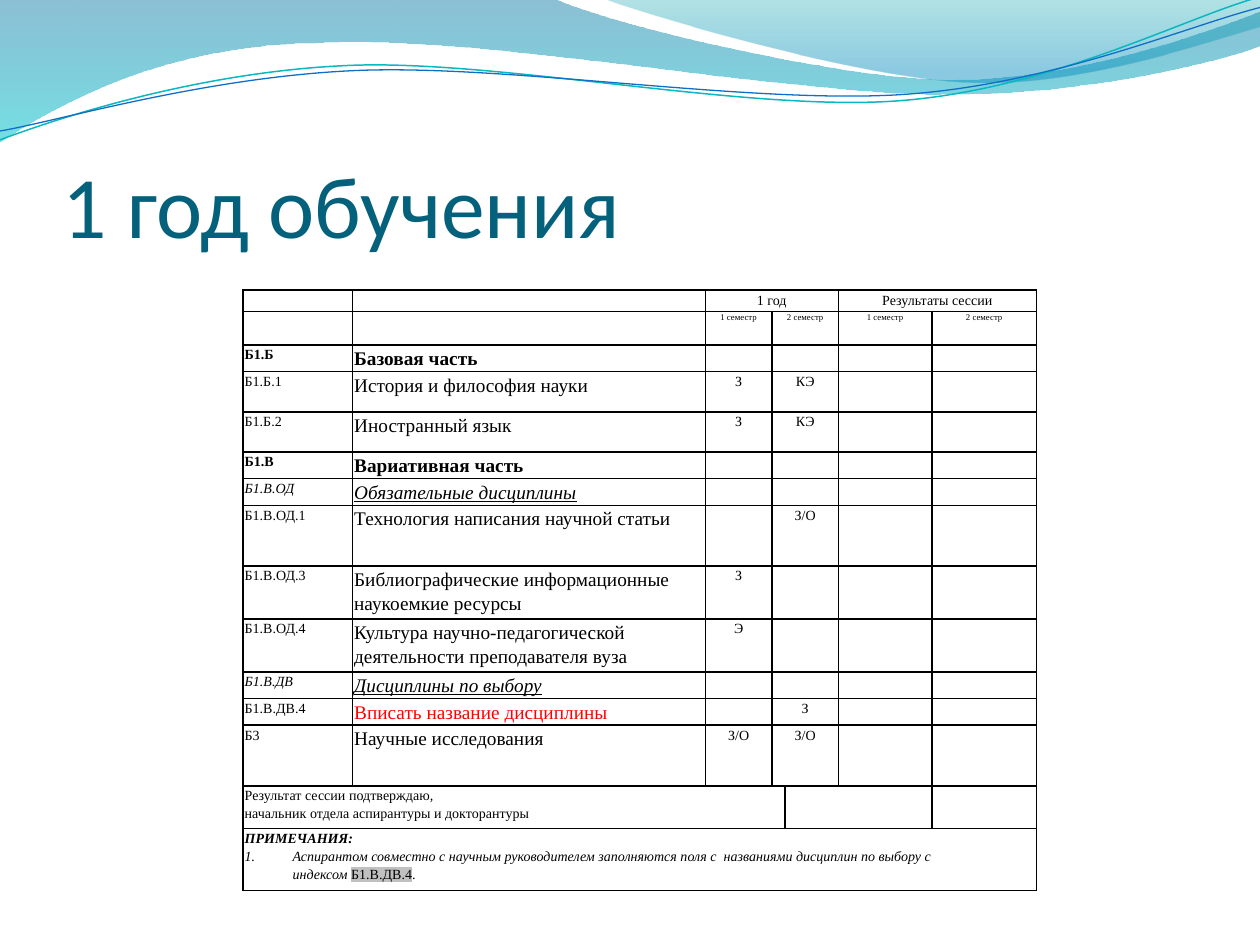
import dataclasses
import math
import typing

import lxml.etree
import pptx
import pptx.dml.color
import pptx.enum.text
import pptx.oxml.ns
import pptx.util

Pt = pptx.util.Pt
qn = pptx.oxml.ns.qn
ALIGN = pptx.enum.text.PP_ALIGN
SERIF = "Times New Roman"
BODY = {"name": SERIF, "size": Pt(8), "bold": False, "italic": False, "underline": False}
COLUMNS = (62.6, 201.6, 38.2, 7.4, 30.5, 53.5, 59.8)
SHORT, MEDIUM, TALL, DOUBLE = 14, 23, 34.6, 28


@dataclasses.dataclass
class Wave:
    start: tuple[float, float]
    segments: list[tuple[float, ...]]
    closed: bool = True
    stops: tuple = ()
    line: str = ""
    width: float = 0
    center: tuple[float, float] = (0, 0)
    rotation: float = 0


@dataclasses.dataclass
class Text:
    text: str
    size: float = 8
    color: str = "000000"
    highlight: str = ""
    style: dict = dataclasses.field(default_factory=dict)


@dataclasses.dataclass
class Course:
    code: str
    name: str
    height: float
    marks: tuple[str, str] = ("", "")
    code_style: dict = dataclasses.field(default_factory=dict)
    name_style: dict = dataclasses.field(default_factory=dict)
    color: str = "000000"


BOLD = {"bold": True}
ITALIC = {"italic": True}
UNDERLINED = {"italic": True, "underline": True}
WAVES = [
    Wave((0, -0.7), [(316.8, -0.7), (342.7, 12.2, 478.1, 45.4, 545.8, 45.4),
                     (614.2, 45.4, 689.8, 18.7, 720, 6.5), (720.7, 25.9),
                     (707.8, 31.7, 626.4, 54.7, 537.1, 54),
                     (447.8, 54, 275, 20.2, 185, 24.5),
                     (92.9, 25.2, 33.1, 59.8, -0.7, 81.4)],
         stops=((0, "0074A1", 45), (1, "00C6CF", 55))),
    Wave((344.9, -0.7), [(366.5, 7.9, 491, 44.6, 553.7, 46.8),
                         (616.3, 49.7, 691.9, 23, 720, 15.1), (720, 0)],
         stops=((0, "00A1A9", 30), (0.8, "008BBF", 45))),
    Wave((0, 79.9), [(34.6, 67, 113.8, 41, 199.4, 37.4),
                     (284.4, 33.8, 427, 64.1, 513.4, 57.6),
                     (599.8, 51.1, 675.4, 10.8, 718.6, -1.4)],
         closed=False, line="0AB8BF", width=0.85, center=(359.3, 41.4), rotation=-2.7),
    Wave((0, 74.9), [(33.8, 69.1, 118.1, 43.9, 203.8, 40.3),
                     (290.2, 36.7, 429.8, 59.8, 516.2, 54),
                     (601.9, 48.2, 677.5, 15.1, 720, 4.3)],
         closed=False, line="0F6FC6", width=0.75, center=(359.6, 42.5), rotation=-2.7),
]
COURSES = [
    Course("Б1.Б", "Базовая часть", SHORT, code_style=BOLD, name_style=BOLD),
    Course("Б1.Б.1", "История и философия науки", MEDIUM, ("З", "КЭ")),
    Course("Б1.Б.2", "Иностранный язык", MEDIUM, ("З", "КЭ")),
    Course("Б1.В", "Вариативная часть", SHORT, code_style=BOLD, name_style=BOLD),
    Course("Б1.В.ОД", "Обязательные дисциплины", SHORT, code_style=ITALIC, name_style=UNDERLINED),
    Course("Б1.В.ОД.1", "Технология написания научной статьи", TALL, ("", "З/О")),
    Course("Б1.В.ОД.3", "Библиографические информационные наукоемкие ресурсы", DOUBLE, ("З", "")),
    Course("Б1.В.ОД.4", "Культура научно-педагогической деятельности преподавателя вуза",
           DOUBLE, ("Э", "")),
    Course("Б1.В.ДВ", "Дисциплины по выбору", SHORT, code_style=ITALIC, name_style=UNDERLINED),
    Course("Б1.В.ДВ.4", "Вписать название дисциплины", SHORT, ("", "З"), color="FF0000"),
    Course("Б3", "Научные исследования", TALL, ("З/О", "З/О")),
]


def rgb(value: str) -> pptx.dml.color.RGBColor:
    return pptx.dml.color.RGBColor.from_string(value)


def apply(target: typing.Any, values: dict) -> None:
    for name, value in values.items():
        setattr(target, name, value)


def wave_points(wave: Wave) -> list[tuple[int, int]]:
    points = [wave.start]
    for segment in wave.segments:
        points += zip(segment[::2], segment[1::2])
    angle = math.radians(-wave.rotation)
    cos, sin = math.cos(angle), math.sin(angle)
    cx, cy = wave.center
    return [(Pt(cx + (x - cx) * cos - (y - cy) * sin), Pt(cy + (x - cx) * sin + (y - cy) * cos))
            for x, y in points]


def bend_segments(shape: typing.Any, wave: Wave) -> None:
    lines = iter(list(shape._element.iter(qn("a:lnTo"))))
    for segment in wave.segments:
        group = [next(lines) for _ in segment[::2]]
        if len(group) == 3:
            curve = lxml.etree.Element(qn("a:cubicBezTo"))
            group[0].addprevious(curve)
            for line in group:
                curve.append(line[0])
                line.getparent().remove(line)


def draw_wave(slide: typing.Any, wave: Wave) -> None:
    first, *rest = wave_points(wave)
    builder = slide.shapes.build_freeform(*first)
    builder.add_line_segments(rest, close=wave.closed)
    shape = builder.convert_to_shape()
    bend_segments(shape, wave)
    shape.shadow.inherit = False
    shape.rotation = wave.rotation
    if wave.line:
        shape.fill.background()
        shape.line.color.rgb = rgb(wave.line)
        shape.line.width = Pt(wave.width)
        return
    shape.line.fill.background()
    shape.fill.gradient()
    shape.fill.gradient_angle = 270
    elements = shape._element.iter(qn("a:gs"))
    for stop, element, values in zip(shape.fill.gradient_stops, elements, wave.stops):
        stop.position, color, opacity = values
        stop.color.rgb = rgb(color)
        lxml.etree.SubElement(element[0], qn("a:alpha"), val=str(opacity * 1000))


def add_text(paragraph: typing.Any, text: Text) -> None:
    run = paragraph.add_run()
    run.text = text.text
    apply(run.font, BODY | {"size": Pt(text.size)} | text.style)
    run.font.color.rgb = rgb(text.color)
    if text.highlight:
        highlight = lxml.etree.Element(qn("a:highlight"))
        lxml.etree.SubElement(highlight, qn("a:srgbClr"), val=text.highlight)
        run.font._element.find(qn("a:solidFill")).addnext(highlight)


def write_cell(cell: typing.Any, *lines: list[Text], centered: bool = False) -> None:
    margin = Pt(4.3 if centered else 1)
    apply(cell, {"margin_left": margin, "margin_right": margin})
    for index, line in enumerate(lines):
        frame = cell.text_frame
        paragraph = frame.add_paragraph() if index else frame.paragraphs[0]
        apply(paragraph, {"line_spacing": 1.15,
                          "alignment": ALIGN.CENTER if centered else ALIGN.LEFT})
        for text in line:
            add_text(paragraph, text)


def format_cell(cell: typing.Any) -> None:
    apply(cell, {"margin_top": 0, "margin_bottom": 0})
    properties = cell._tc.get_or_add_tcPr()
    for side in ("a:lnL", "a:lnR", "a:lnT", "a:lnB"):
        line = lxml.etree.SubElement(properties, qn(side), w=str(Pt(1)))
        fill = lxml.etree.SubElement(line, qn("a:solidFill"))
        lxml.etree.SubElement(fill, qn("a:srgbClr"), val="000000")
    cell.fill.background()
    if not cell.text_frame.text:
        lxml.etree.SubElement(cell.text_frame.paragraphs[0]._p, qn("a:endParaRPr"), sz="800")


def draw_table(slide: typing.Any) -> None:
    heights = [SHORT - 1.8, 19.2, *(course.height for course in COURSES), 24.5, 35.3]
    frame = slide.shapes.add_table(len(heights), len(COLUMNS), Pt(138.8), Pt(165.8),
                                   Pt(sum(COLUMNS)), Pt(sum(heights)))
    table = frame.table
    apply(table, {"first_row": False, "horz_banding": False})
    for column, width in zip(table.columns, COLUMNS):
        column.width = Pt(width)
    for row, height in zip(table.rows, heights):
        row.height = Pt(height)
    signature, notes = len(heights) - 2, len(heights) - 1
    spans = [(0, 2, 4), (0, 5, 6), (signature, 0, 3), (signature, 4, 5), (notes, 0, 6)]
    spans += [(row, 3, 4) for row in range(1, signature)]
    for row, first, last in spans:
        table.cell(row, first).merge(table.cell(row, last))

    for column, title in ((2, "1 год"), (5, "Результаты сессии")):
        write_cell(table.cell(0, column), [Text(title)], centered=True)
    for column, number in ((2, 1), (3, 2), (5, 1), (6, 2)):
        write_cell(table.cell(1, column), [Text(f"{number} семестр", 5)], centered=True)
    for row, course in enumerate(COURSES, 2):
        write_cell(table.cell(row, 0), [Text(course.code, style=course.code_style)])
        write_cell(table.cell(row, 1),
                   [Text(course.name, 11, course.color, style=course.name_style)])
        for column, mark in enumerate(course.marks, 2):
            if mark:
                write_cell(table.cell(row, column), [Text(mark)], centered=True)
    write_cell(table.cell(signature, 0), [Text("Результат сессии подтверждаю,")],
               [Text("начальник отдела аспирантуры и докторантуры")])
    note = ("Аспирантом совместно с научным руководителем заполняются поля с  "
            "названиями дисциплин по выбору с индексом ")
    note_cell = table.cell(notes, 0)
    write_cell(note_cell, [Text("ПРИМЕЧАНИЯ:", style=BOLD | ITALIC)],
               [Text(note, style=ITALIC), Text("Б1.В.ДВ.4", highlight="C0C0C0"), Text(".")])
    note_cell.margin_right = Pt(36)
    properties = note_cell.text_frame.paragraphs[1]._p.get_or_add_pPr()
    properties.set("marL", str(Pt(27.4)))
    properties.set("indent", str(-Pt(27.4)))
    lxml.etree.SubElement(properties, qn("a:buFont"), typeface=SERIF)
    lxml.etree.SubElement(properties, qn("a:buAutoNum"), type="arabicPeriod")
    for cell in table.iter_cells():
        format_cell(cell)


def draw_title(slide: typing.Any) -> None:
    frame = slide.shapes.add_textbox(Pt(36), Pt(56), Pt(648), Pt(90)).text_frame
    apply(frame, {"word_wrap": True, "vertical_anchor": pptx.enum.text.MSO_ANCHOR.BOTTOM,
                  "margin_left": 0, "margin_right": 0, "margin_top": Pt(3.6), "margin_bottom": 0})
    add_text(frame.paragraphs[0], Text("1 год обучения", 50, "04617B", style={"name": "Calibri"}))


def main() -> None:
    presentation = pptx.Presentation()
    apply(presentation, {"slide_width": Pt(720), "slide_height": Pt(540)})
    slide = presentation.slides.add_slide(presentation.slide_layouts[6])
    for wave in WAVES:
        draw_wave(slide, wave)
    draw_title(slide)
    draw_table(slide)
    presentation.save("out.pptx")


if __name__ == "__main__":
    main()
